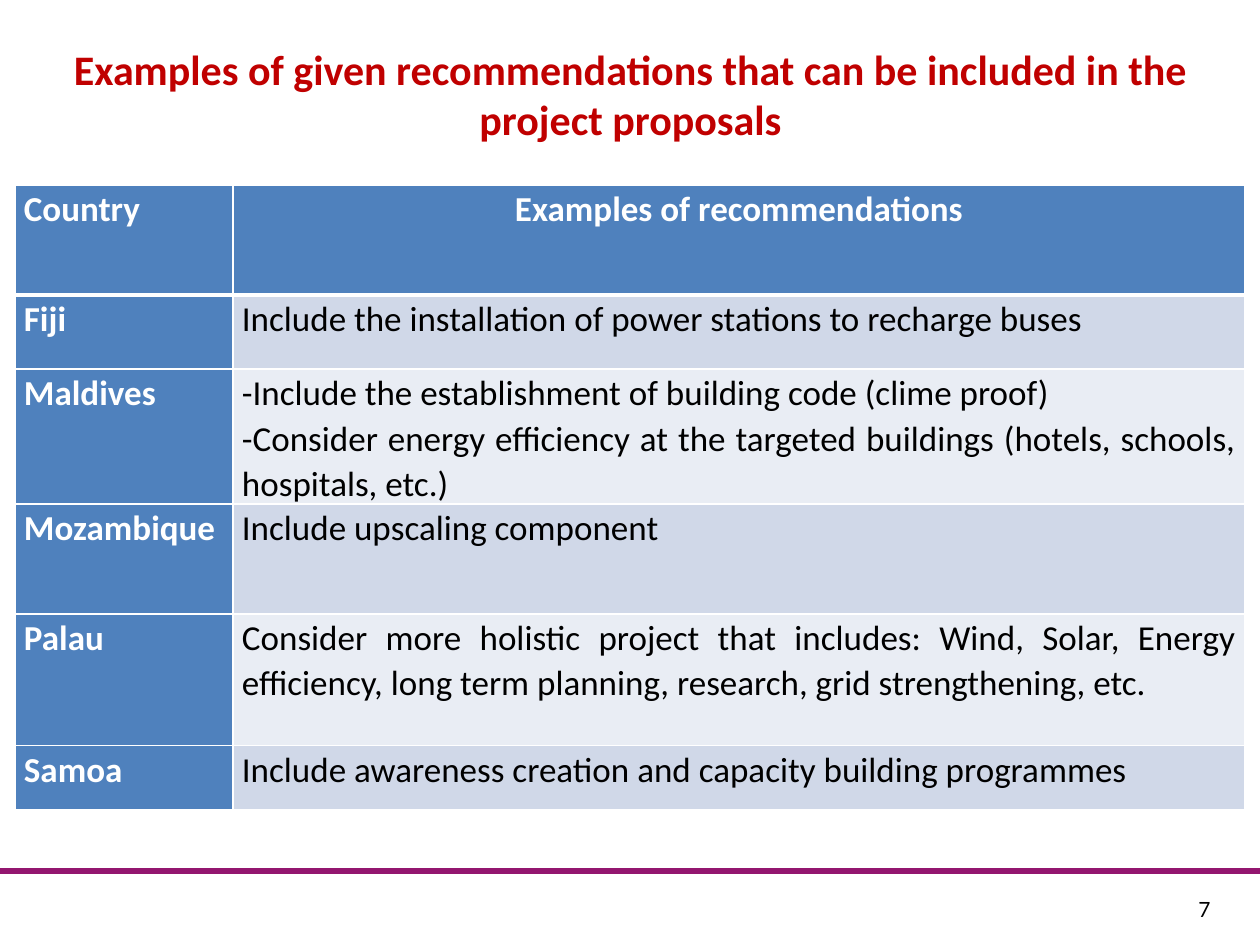
from pptx import Presentation
from pptx import util as u
from pptx.dml.color import RGBColor
from pptx.enum import shapes, text
from pptx.oxml import parse_xml
from pptx.oxml.ns import nsdecls, qn

PX = u.Inches(1) // 126
BLUE, WHITE, BLACK = "4F81BD", "FFFFFF", "000000"
BANDS = ("D0D8E8", "E9EDF4")
ALIGN = text.PP_ALIGN

TITLE = ("Examples of given recommendations that can be included "
         "in the project proposals")
COLUMNS = (218, 1012)
TABLE_HEIGHT = 645
ROWS = [
    (110, "Country", "Examples of recommendations"),
    (74, "Fiji", "Include the installation of power stations to recharge buses"),
    (89, "Maldives",
     "-Include the establishment of building code (clime proof)\n"
     "-Consider energy efficiency at the targeted buildings "
     "(hotels, schools, hospitals, etc.)"),
    (110, "Mozambique", "Include upscaling component"),
    (132, "Palau",
     "Consider more holistic project that includes: Wind, Solar, Energy "
     "efficiency, long term planning, research, grid strengthening, etc."),
    (64, "Samoa", "Include awareness creation and capacity building programmes"),
]


def px(*values):
    return [v * PX for v in values]


def rgb(color):
    return RGBColor.from_string(color)


def style(p, size, color, font="Calibri", bold=False, align=None):
    p.alignment = align
    p.font.name, p.font.size, p.font.bold = font, u.Pt(size), bold
    p.font.color.rgb = rgb(color)


def add_text(s, box, content, size, color, **options):
    tf = s.shapes.add_textbox(*px(*box)).text_frame
    tf.word_wrap = True
    tf.auto_size = text.MSO_AUTO_SIZE.SHAPE_TO_FIT_TEXT
    tf.text = content
    style(tf.paragraphs[0], size, color, **options)


def add_rule(s, y, width, color, weight):
    line = s.shapes.add_connector(shapes.MSO_CONNECTOR.STRAIGHT, *px(0, y, width, y))
    line.line.color.rgb = rgb(color)
    line.line.width = u.Pt(weight)
    line._element.spPr.append(parse_xml(f"<a:effectLst {nsdecls('a')}/>"))


def set_borders(cell, bottom):
    """Draw white borders, 1 pt except for the bottom one."""
    tcPr = cell._tc.get_or_add_tcPr()
    fill = tcPr.find(qn("a:solidFill"))
    for side, points in (("L", 1), ("R", 1), ("T", 1), ("B", bottom)):
        fill.addprevious(parse_xml(
            f'<a:ln{side} {nsdecls("a")} w="{u.Pt(points)}"><a:solidFill>'
            f'<a:srgbClr val="{WHITE}"/></a:solidFill></a:ln{side}>'))


def fill_cell(cell, content, row, col):
    heading = row == 0 or col == 0
    cell.margin_left = cell.margin_right = 9 * PX
    cell.margin_top = cell.margin_bottom = 0
    cell.fill.solid()
    cell.fill.fore_color.rgb = rgb(BLUE if heading else BANDS[(row - 1) % 2])
    set_borders(cell, bottom=3 if row == 0 else 1)
    cell.text_frame.text = content
    for p in cell.text_frame.paragraphs:
        p.line_spacing = 1.07
        style(p, 20, WHITE if heading else BLACK, bold=heading,
              align=ALIGN.CENTER if row == 0 and col == 1 else ALIGN.JUSTIFY)


def add_recommendations(s, left, top):
    frame = s.shapes.add_table(len(ROWS), len(COLUMNS),
                               *px(left, top, sum(COLUMNS), TABLE_HEIGHT))
    table = frame.table
    for column, width in zip(table.columns, COLUMNS):
        column.width = width * PX
    for i, (height, *contents) in enumerate(ROWS):
        table.rows[i].height = height * PX
        for j, content in enumerate(contents):
            fill_cell(table.cell(i, j), content, i, j)
    frame.height = TABLE_HEIGHT * PX


def main():
    prs = Presentation()
    prs.slide_width, prs.slide_height = px(1260, 945)
    s = prs.slides.add_slide(prs.slide_layouts[6])
    add_rule(s, 871, 1260, "93166F", 3)
    add_text(s, (1186, 890, 59, 38), "7", 12, BLACK, font="Lato")
    add_recommendations(s, 15, 185)
    add_text(s, (35, 37, 1191, 115), TITLE, 24, "C00000",
             bold=True, align=ALIGN.CENTER)
    prs.save("out.pptx")


if __name__ == "__main__":
    main()
